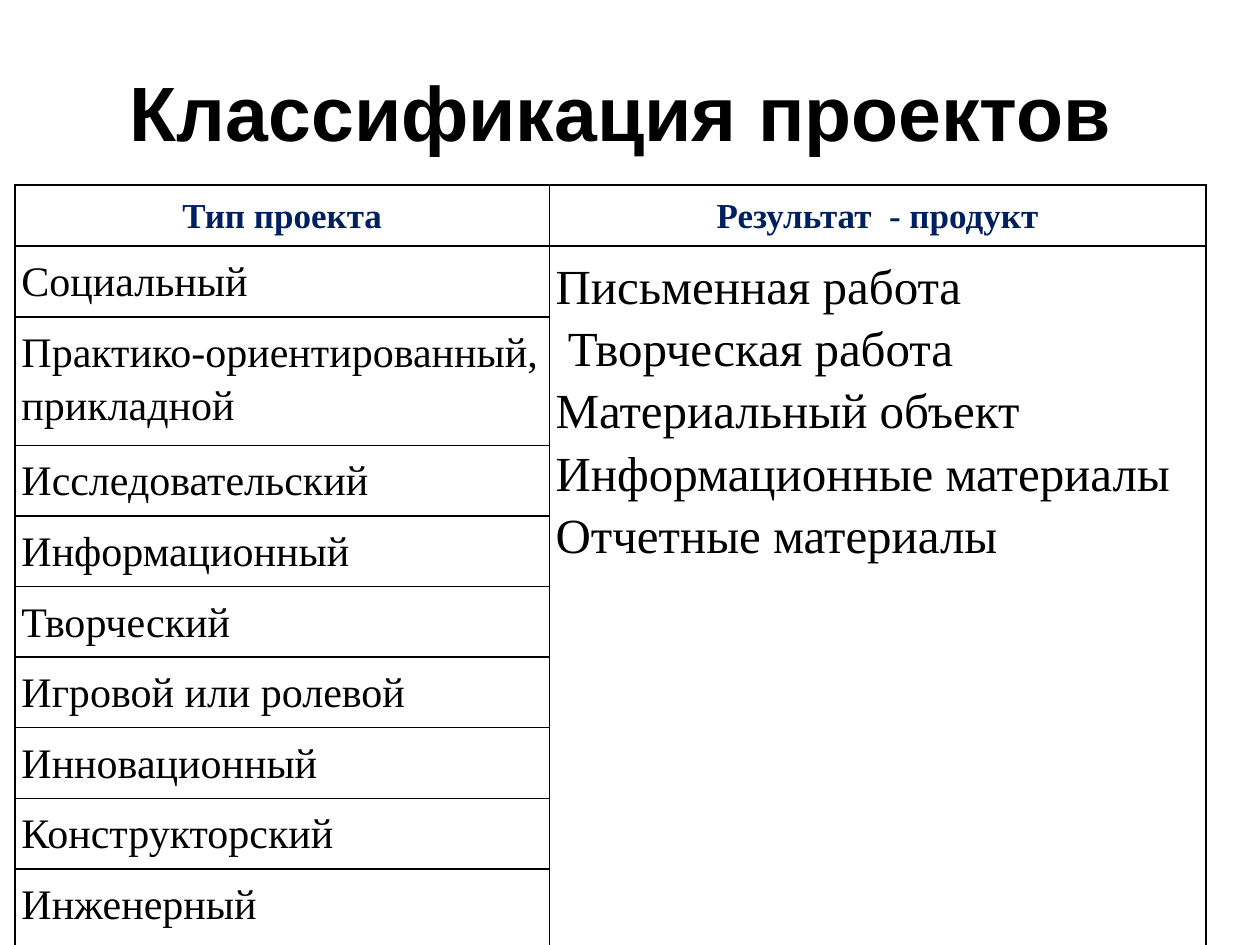
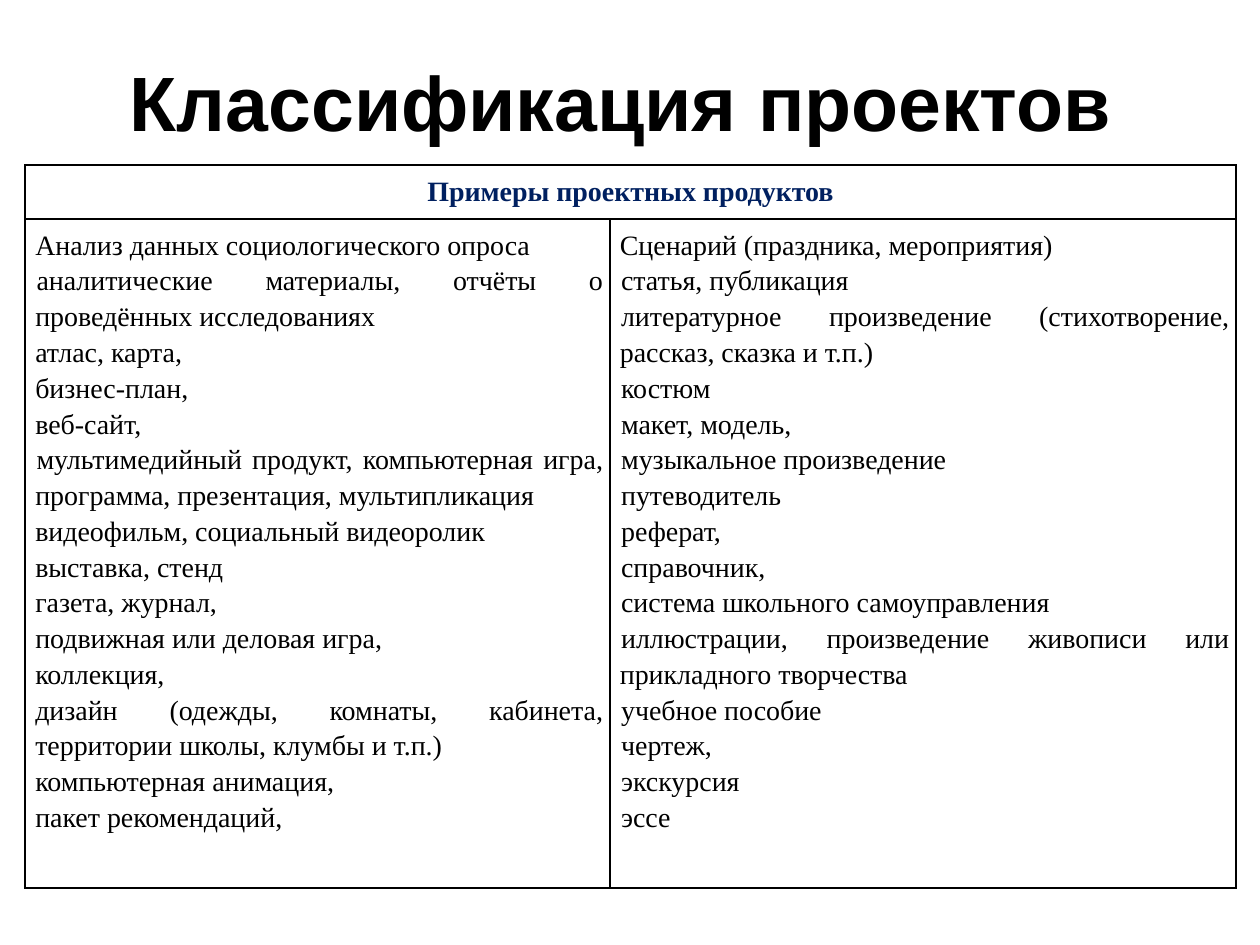
import dataclasses

import lxml.etree
import pptx
import pptx.dml.color
import pptx.enum.text
import pptx.oxml.ns
import pptx.util

Inches = pptx.util.Inches
Pt = pptx.util.Pt
ALIGN = pptx.enum.text.PP_ALIGN
ANCHOR = pptx.enum.text.MSO_ANCHOR


@dataclasses.dataclass(frozen=True)
class Theme:
    text: str = "000000"
    header: str = "002060"
    border: str = "000000"
    title_font: str = "Arial"
    table_font: str = "Times New Roman"
    title_size: int = 44
    header_size: int = 20
    type_size: int = 24
    result_size: int = 28
    product_size: int = 16
    line_spacing: float = 1.15
    cell_inset: float = 0.05
    border_width: int = 1


THEME = Theme()
TITLE = "Классификация проектов"

PROJECT_TYPES = [
    "Социальный",
    "Практико-ориентированный, прикладной",
    "Исследовательский",
    "Информационный",
    "Творческий",
    "Игровой или ролевой",
    "Инновационный",
    "Конструкторский",
    "Инженерный",
]
RESULTS = [
    "Письменная работа",
    " Творческая работа",
    "Материальный объект",
    "Информационные материалы",
    "Отчетные материалы",
]
PRODUCTS_LEFT = [
    "Анализ данных социологического опроса",
    "аналитические материалы, отчёты о проведённых исследованиях",
    "атлас, карта,",
    "бизнес-план,",
    "веб-сайт,",
    "мультимедийный продукт, компьютерная игра, программа, презентация, мультипликация",
    "видеофильм, социальный видеоролик",
    "выставка, стенд",
    "газета, журнал,",
    "подвижная или деловая игра,",
    "коллекция,",
    "дизайн (одежды, комнаты, кабинета, территории школы, клумбы и т.п.)",
    "компьютерная анимация,",
    "пакет рекомендаций,",
]
PRODUCTS_RIGHT = [
    "Сценарий (праздника, мероприятия)",
    "статья, публикация",
    "литературное произведение (стихотворение, рассказ, сказка и т.п.)",
    "костюм",
    "макет, модель,",
    "музыкальное произведение",
    "путеводитель",
    "реферат,",
    "справочник,",
    "система школьного самоуправления",
    "иллюстрации, произведение живописи или прикладного творчества",
    "учебное пособие",
    "чертеж,",
    "экскурсия",
    "эссе",
]


def write_text(tf, lines, *, size, font=THEME.table_font, color=THEME.text, bold=False,
               align=ALIGN.JUSTIFY, spacing=THEME.line_spacing, margin=0, indented=()):
    tf.word_wrap = True
    for i, line in enumerate(lines):
        p = tf.paragraphs[0] if i == 0 else tf.add_paragraph()
        p.alignment = align
        p.line_spacing = spacing
        if margin:
            pPr = p._p.get_or_add_pPr()
            pPr.set("marL", str(Inches(margin)))
            pPr.set("indent", str(Inches(0.01 if i in indented else 0)))
        r = p.add_run()
        r.text = line
        r.font.size = Pt(size)
        r.font.name = font
        r.font.bold = bold
        r.font.color.rgb = pptx.dml.color.RGBColor.from_string(color)


def add_title(slide, top):
    sp = slide.shapes.add_textbox(Inches(0.43), Inches(top), Inches(9), Inches(0.75))
    sp.text_frame.vertical_anchor = ANCHOR.MIDDLE
    write_text(sp.text_frame, [TITLE], size=THEME.title_size, font=THEME.title_font,
               bold=True, align=ALIGN.CENTER, spacing=1.0)


def set_borders(cell):
    qn = pptx.oxml.ns.qn
    tcPr = cell._tc.get_or_add_tcPr()
    for i, side in enumerate(("lnL", "lnR", "lnT", "lnB")):
        ln = lxml.etree.Element(qn(f"a:{side}"), w=str(Pt(THEME.border_width)))
        fill = lxml.etree.SubElement(ln, qn("a:solidFill"))
        lxml.etree.SubElement(fill, qn("a:srgbClr"), val=THEME.border)
        tcPr.insert(i, ln)


def add_grid(slide, left, top, widths, heights):
    frame = slide.shapes.add_table(len(heights), len(widths), Inches(left), Inches(top),
                                   Inches(sum(widths)), Inches(sum(heights)))
    table = frame.table
    table.first_row = False
    table.horz_banding = False
    for column, width in zip(table.columns, widths):
        column.width = Inches(width)
    for row, height in zip(table.rows, heights):
        row.height = Inches(height)
    inset = Inches(THEME.cell_inset)
    for cell in table.iter_cells():
        cell.margin_left = cell.margin_right = inset
        cell.margin_top = cell.margin_bottom = inset
        cell.fill.background()
        set_borders(cell)
    return table


def write_header(cell, text, size):
    write_text(cell.text_frame, [text], size=size, color=THEME.header, bold=True,
               align=ALIGN.CENTER)


def add_types_slide(prs):
    slide = prs.slides.add_slide(prs.slide_layouts[6])
    add_title(slide, 0.5)
    heights = [0.46, 0.53, 0.95] + [0.53] * 6 + [1.08]
    table = add_grid(slide, 0.12, 1.47, [4.24, 5.21], heights)
    for col, text in enumerate(["Тип проекта", "Результат  - продукт"]):
        write_header(table.cell(0, col), text, THEME.header_size)
    for row, name in enumerate(PROJECT_TYPES, start=1):
        write_text(table.cell(row, 0).text_frame, [name], size=THEME.type_size)
    results = table.cell(1, 1)
    results.merge(table.cell(len(PROJECT_TYPES), 1))
    write_text(results.text_frame, RESULTS, size=THEME.result_size)


def add_products_slide(prs):
    slide = prs.slides.add_slide(prs.slide_layouts[6])
    add_title(slide, 0.42)
    table = add_grid(slide, 0.2, 1.31, [4.64, 4.97], [0.43, 4.93])
    header = table.cell(0, 0)
    header.merge(table.cell(0, 1))
    write_header(header, "Примеры проектных продуктов", THEME.product_size)
    columns = [(PRODUCTS_LEFT, (1, 5)), (PRODUCTS_RIGHT, range(1, len(PRODUCTS_RIGHT)))]
    for col, (products, indented) in enumerate(columns):
        write_text(table.cell(1, col).text_frame, products, size=THEME.product_size,
                   margin=0.03, indented=indented)


def main():
    prs = pptx.Presentation()
    prs.slide_width = Inches(10)
    prs.slide_height = Inches(7.5)
    add_types_slide(prs)
    add_products_slide(prs)
    prs.save("out.pptx")


if __name__ == "__main__":
    main()
